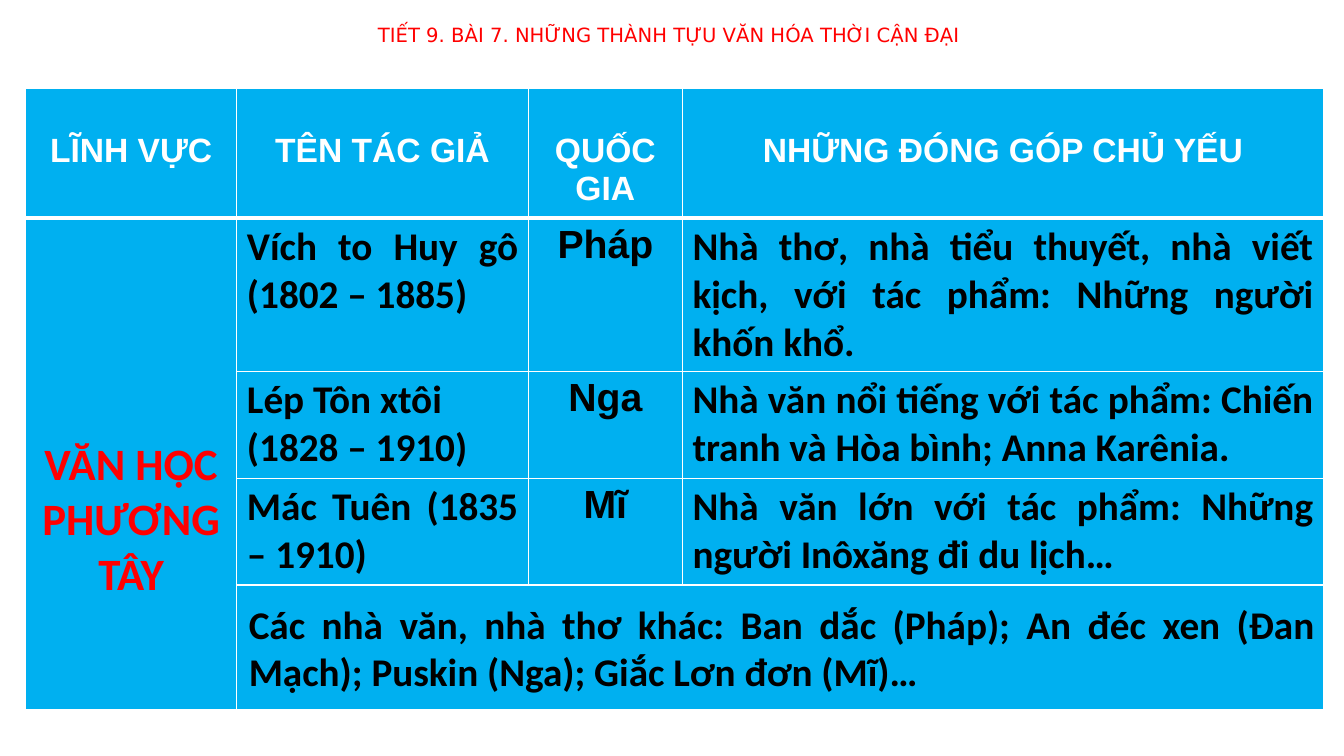
from dataclasses import dataclass

from lxml import etree
from pptx import Presentation
from pptx.dml.color import RGBColor
from pptx.enum.text import MSO_AUTO_SIZE, PP_ALIGN
from pptx.oxml.ns import qn
from pptx.util import Cm, Pt

CENTER, JUSTIFY = PP_ALIGN.CENTER, PP_ALIGN.JUSTIFY
FIT_SHAPE = MSO_AUTO_SIZE.SHAPE_TO_FIT_TEXT
RED = RGBColor(0xFF, 0x00, 0x00)
PINK = RGBColor(0xFF, 0x33, 0x99)
WHITE = RGBColor(0xFF, 0xFF, 0xFF)
BLACK = RGBColor(0x00, 0x00, 0x00)
BLUE = RGBColor(0x00, 0xB0, 0xF0)

COLUMN_WIDTHS = (5.33, 7.34, 3.89, 16.15)
ROW_HEIGHTS = (3.15, 3.87, 2.69, 2.69, 3.15)
HEADERS = ("LĨNH VỰC", "TÊN TÁC GIẢ", "QUỐC GIA", "NHỮNG ĐÓNG GÓP CHỦ YẾU")


@dataclass(frozen=True)
class TextStyle:
    font: str
    size: float
    color: RGBColor
    alignment: PP_ALIGN
    bold: bool = True


@dataclass(frozen=True)
class Author:
    name: tuple[str, ...]
    country: str
    works: str


TITLE_STYLE = TextStyle("DejaVu Sans", 14, RED, CENTER, bold=False)
HEADER_STYLE = TextStyle("Arial", 24, WHITE, CENTER)
FIELD_STYLE = TextStyle("Calibri", 32, RED, CENTER)
BODY_STYLE = TextStyle("Calibri", 28, BLACK, JUSTIFY)
COUNTRY_STYLE = TextStyle("Arial", 28, BLACK, CENTER)

AUTHORS = (
    Author(("Vích to Huy gô (1802 – 1885)",), "Pháp",
           "Nhà thơ, nhà tiểu thuyết, nhà viết kịch, với tác phẩm: Những người khốn khổ."),
    Author(("Lép Tôn xtôi", "(1828 – 1910)"), "Nga",
           "Nhà văn nổi tiếng với tác phẩm: Chiến tranh và Hòa bình; Anna Karênia."),
    Author(("Mác Tuên (1835 – 1910)",), "Mĩ",
           "Nhà văn lớn với tác phẩm: Những người Inôxăng đi du lịch…"),
)


def write_text(text_frame, lines: tuple[str, ...], style: TextStyle) -> None:
    for index, line in enumerate(lines):
        paragraph = text_frame.add_paragraph() if index else text_frame.paragraphs[0]
        paragraph.alignment = style.alignment
        run = paragraph.add_run()
        run.text = line
        run.font.name = style.font
        run.font.size = Pt(style.size)
        run.font.bold = style.bold
        run.font.color.rgb = style.color


def make_line(tag: str, color: RGBColor, width: float):
    line = etree.Element(qn(tag), w=str(Pt(width)))
    fill = etree.SubElement(line, qn("a:solidFill"))
    etree.SubElement(fill, qn("a:srgbClr"), val=str(color))
    return line


def add_text_box(slide, box: tuple[float, ...], text: str, style: TextStyle, wrap: bool):
    shape = slide.shapes.add_textbox(*(Cm(length) for length in box))
    shape.text_frame.word_wrap = wrap
    write_text(shape.text_frame, (text,), style)
    return shape


def style_cell(cell, bottom: float, top: float) -> None:
    # Borders come before the fill in the cell properties
    properties = cell._tc.get_or_add_tcPr()
    for side, width in (("L", 1), ("R", 1), ("T", top), ("B", bottom)):
        properties.append(make_line(f"a:ln{side}", WHITE, width))
    cell.fill.solid()
    cell.fill.fore_color.rgb = BLUE


def add_authors_table(slide) -> None:
    frame = slide.shapes.add_table(
        len(ROW_HEIGHTS), len(COLUMN_WIDTHS), Cm(0.64), Cm(2.24),
        Cm(sum(COLUMN_WIDTHS)), Cm(sum(ROW_HEIGHTS)))
    table = frame.table
    for column, width in zip(table.columns, COLUMN_WIDTHS):
        column.width = Cm(width)
    for index, (row, height) in enumerate(zip(table.rows, ROW_HEIGHTS)):
        row.height = Cm(height)
        for cell in row.cells:
            style_cell(cell, bottom=3 if index == 0 else 1, top=3 if index == 1 else 1)

    # Header row
    for index, header in enumerate(HEADERS):
        cell = table.cell(0, index)
        cell.margin_top = Cm(1.09)
        write_text(cell.text_frame, (header,), HEADER_STYLE)

    # Field name, spanning all rows below the header
    field = table.cell(1, 0)
    field.merge(table.cell(4, 0))
    field.margin_top = Cm(5.55)
    write_text(field.text_frame, ("VĂN HỌC PHƯƠNG TÂY",), FIELD_STYLE)

    # One row per author, then a wide empty row
    for index, author in enumerate(AUTHORS, start=1):
        write_text(table.cell(index, 1).text_frame, author.name, BODY_STYLE)
        write_text(table.cell(index, 2).text_frame, (author.country,), COUNTRY_STYLE)
        write_text(table.cell(index, 3).text_frame, (author.works,), BODY_STYLE)
    table.cell(4, 1).merge(table.cell(4, 3))


def main() -> None:
    presentation = Presentation()
    presentation.slide_width = Cm(33.87)
    presentation.slide_height = Cm(19.05)
    slide = presentation.slides.add_slide(presentation.slide_layouts[6])

    # Title with outlined letters
    title = add_text_box(slide, (2.84, 0.46, 28.04, 1.4),
                         "TIẾT 9. BÀI 7. NHỮNG THÀNH TỰU VĂN HÓA THỜI CẬN ĐẠI",
                         TITLE_STYLE, wrap=False)
    title_run = title.text_frame.paragraphs[0].runs[0]
    title_run.font._element.insert(0, make_line("a:ln", PINK, 1.5))

    add_authors_table(slide)

    # Other writers, over the last table row
    others = add_text_box(slide, (6.02, 14.99, 27.36, 2.64),
                          "Các nhà văn, nhà thơ khác: Ban dắc (Pháp); An đéc xen (Đan Mạch); "
                          "Puskin (Nga); Giắc Lơn đơn (Mĩ)…", BODY_STYLE, wrap=True)
    others.text_frame.auto_size = FIT_SHAPE

    presentation.save("out.pptx")


if __name__ == "__main__":
    main()
